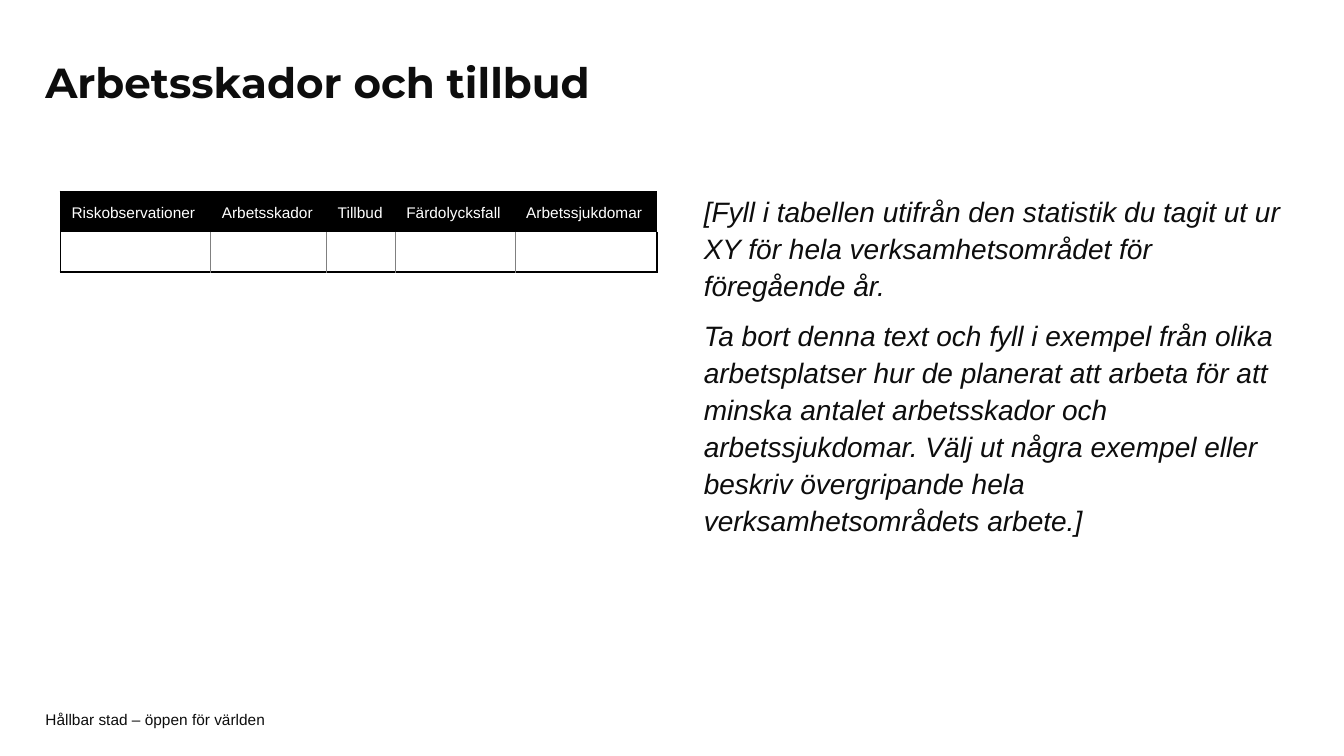
import lxml.etree
import pptx
import pptx.dml.color
import pptx.enum.text
import pptx.oxml.ns
import pptx.util

W, H = 13.33, 7.5
MARGIN = 0.45
TOP = 1.9
COLUMN_W = 5.91
COLORS = {"ink": "0D0D0D", "black": "000000", "white": "FFFFFF", "grid": "808080"}
ANCHOR = pptx.enum.text.MSO_ANCHOR

TITLE = "Arbetsskador och tillbud"
FOOTER = "Hållbar stad – öppen för världen"
GUIDANCE = [
    "[Fyll i tabellen utifrån den statistik du tagit ut ur XY för hela verksamhetsområdet för föregående år.",
    "Ta bort denna text och fyll i exempel från olika arbetsplatser hur de planerat att arbeta för att "
    "minska antalet arbetsskador och arbetssjukdomar. Välj ut några exempel eller beskriv övergripande "
    "hela verksamhetsområdets arbete.]",
]
INJURY_COLUMNS = {
    "Riskobservationer": 1.49,
    "Arbetsskador": 1.15,
    "Tillbud": 0.68,
    "Färdolycksfall": 1.19,
    "Arbetssjukdomar": 1.41,
}
ROW_H = 0.4


def inches(*values):
    return [pptx.util.Inches(v) for v in values]


def rgb(name):
    return pptx.dml.color.RGBColor.from_string(COLORS[name])


def write(p, text, size, color="ink", font="Arial", bold=False, italic=False,
          line=None, before=0, after=0):
    p.line_spacing = line
    p.space_before = pptx.util.Pt(before)
    p.space_after = pptx.util.Pt(after)
    target = p
    if text:
        target = p.add_run()
        target.text = text
    f = target.font
    f.name, f.size, f.bold, f.italic = font, pptx.util.Pt(size), bold, italic
    f.color.rgb = rgb(color)


def add_text(s, box, texts, anchor=ANCHOR.MIDDLE, inset_y=0, before=0, **style):
    tf = s.shapes.add_textbox(*inches(*box)).text_frame
    tf.word_wrap = True
    tf.vertical_anchor = anchor
    tf.margin_left = tf.margin_right = 0
    tf.margin_top = tf.margin_bottom = pptx.util.Inches(inset_y)
    for i, text in enumerate(texts):
        p = tf.add_paragraph() if i else tf.paragraphs[0]
        write(p, text, before=before if i else 0, **style)


def set_borders(cell, borders):
    tc_pr = cell._tc.get_or_add_tcPr()
    for side in "LRTB":
        ln = lxml.etree.SubElement(tc_pr, pptx.oxml.ns.qn("a:ln" + side))
        if side in borders:
            color, width = borders[side]
            ln.set("w", str(pptx.util.Pt(width)))
            fill = lxml.etree.SubElement(ln, pptx.oxml.ns.qn("a:solidFill"))
            lxml.etree.SubElement(fill, pptx.oxml.ns.qn("a:srgbClr"), val=COLORS[color])
        else:
            ln.set("w", "0")
            lxml.etree.SubElement(ln, pptx.oxml.ns.qn("a:noFill"))


def format_cell(cell, text, borders, fill=None):
    margins = inches(0.11, 0.08, 0.02, 0.08)
    cell.margin_left, cell.margin_top, cell.margin_right, cell.margin_bottom = margins
    cell.vertical_anchor = ANCHOR.MIDDLE
    write(cell.text_frame.paragraphs[0], text, 11, color="white" if fill else "ink",
          line=1.15, after=8)
    set_borders(cell, borders)
    if fill:
        cell.fill.solid()
        cell.fill.fore_color.rgb = rgb(fill)
    else:
        cell.fill.background()


def add_injury_table(s, x, y, w):
    table = s.shapes.add_table(2, len(INJURY_COLUMNS), *inches(x, y, w, 2 * ROW_H)).table
    table.first_row = table.horz_banding = False
    for row in table.rows:
        row.height = pptx.util.Inches(ROW_H)
    frame, grid = ("black", 1.5), ("grid", 0.5)
    last = len(INJURY_COLUMNS) - 1
    for i, (label, width) in enumerate(INJURY_COLUMNS.items()):
        table.columns[i].width = pptx.util.Inches(width)
        head = {"T": frame} if i else {"T": frame, "L": frame}
        body = {"L": grid if i else frame, "R": grid if i < last else frame, "B": frame}
        format_cell(table.cell(0, i), label, head, fill="black")
        format_cell(table.cell(1, i), "", body)


def build_slide(prs):
    s = prs.slides.add_slide(prs.slide_layouts[6])
    add_text(s, (MARGIN, 7.06, 9.45, 0.16), [FOOTER], size=11)
    add_text(s, (MARGIN, 0.44, 10.03, 0.81), [TITLE], inset_y=0.05,
             size=30, font="Montserrat", bold=True, line=0.9)
    add_injury_table(s, 0.6, TOP, COLUMN_W)
    add_text(s, (6.98, TOP, COLUMN_W, 4.57), GUIDANCE, anchor=ANCHOR.TOP,
             size=20, italic=True, line=1.1, before=6, after=3)


def main():
    prs = pptx.Presentation()
    prs.slide_width, prs.slide_height = inches(W, H)
    build_slide(prs)
    prs.save("out.pptx")


if __name__ == "__main__":
    main()
